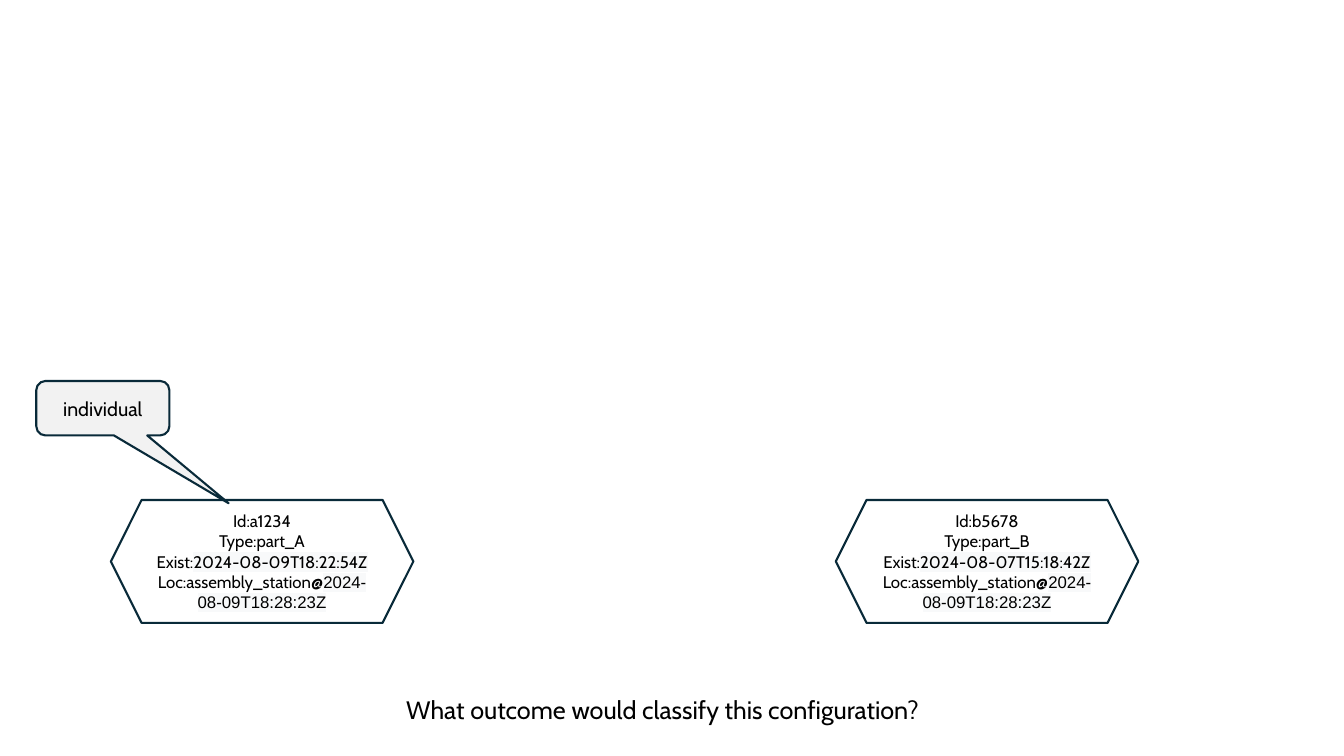
from lxml.etree import Element, SubElement
from pptx import Presentation
from pptx.dml.color import RGBColor
from pptx.enum.shapes import MSO_SHAPE as Shape
from pptx.enum.text import MSO_ANCHOR as Anchor, MSO_AUTO_SIZE as AutoSize, PP_ALIGN as Align
from pptx.oxml.ns import qn
from pptx.util import Inches, Pt

# Content: each paragraph is a list of (text, format) runs
STAMP = {"highlight": "stamp"}
LOCATION = [("Loc:assembly_station@", {}),
            ("2024-08-09T18:28:23Z", {"font": "stamp_font", **STAMP})]
INDIVIDUALS = [
    ("a1234", "part_A", "2024-08-09T18:22:54Z"),
    ("b5678", "part_B", "2024-08-07T15:18:42Z"),
]
CALLOUT = "individual"
QUESTION = "What outcome would classify this configuration?"

THEME = {
    "font": "Cabin", "stamp_font": "Arial",
    "text": "000000", "line": "092A39", "node": "FFFFFF",
    "callout": "F2F2F2", "stamp": "F8F9FA",
    "node_size": 12, "callout_size": 14, "question_size": 18, "line_width": 1.5,
}

# Layout in inches
NODE_LEFT, NODE_TOP, NODE_W, NODE_H = 1.1, 4.96, 3, 1.22
NODE_PITCH = 7.19
CALLOUT_BOX = (0.36, 3.78, 1.32, 0.54)
CALLOUT_TIP = (0.945, 1.746, 0.167)
QUESTION_BOX = (3.93, 6.84, 5.47, 0.4)


def write(frame, paragraphs, size, align=Align.CENTER, anchor=Anchor.MIDDLE, wrap=True):
    frame.word_wrap = wrap
    frame.vertical_anchor = anchor
    for number, runs in enumerate(paragraphs):
        paragraph = frame.paragraphs[0] if number == 0 else frame.add_paragraph()
        paragraph.alignment = align
        for words, style in runs:
            run = paragraph.add_run()
            run.text = words
            run.font.size = Pt(THEME[size])
            run.font.name = THEME[style.get("font", "font")]
            run.font.color.rgb = RGBColor.from_string(THEME["text"])
            if "highlight" in style:
                marker = Element(qn("a:highlight"))
                SubElement(marker, qn("a:srgbClr"), val=THEME[style["highlight"]])
                run.font._element.find(qn("a:solidFill")).addnext(marker)


def add_outlined(slide, kind, box, fill):
    outlined = slide.shapes.add_shape(kind, *map(Inches, box))
    outlined.shadow.inherit = False
    outlined.fill.solid()
    outlined.fill.fore_color.rgb = RGBColor.from_string(THEME[fill])
    outlined.line.color.rgb = RGBColor.from_string(THEME["line"])
    outlined.line.width = Pt(THEME["line_width"])
    return outlined


def main():
    deck = Presentation()
    deck.slide_width, deck.slide_height = Inches(13.33), Inches(7.5)
    slide = deck.slides.add_slide(deck.slide_layouts[6])

    # Individuals
    for column, (identity, part, exist) in enumerate(INDIVIDUALS):
        box = (NODE_LEFT + column * NODE_PITCH, NODE_TOP, NODE_W, NODE_H)
        node = add_outlined(slide, Shape.HEXAGON, box, "node")
        write(node.text_frame, [
            [(f"Id:{identity}", {})],
            [(f"Type:{part}", {})],
            [("Exist:", {}), (exist, STAMP)],
            LOCATION,
        ], "node_size")

    # Question
    question = slide.shapes.add_textbox(*map(Inches, QUESTION_BOX)).text_frame
    write(question, [[(QUESTION, {})]], "question_size",
          align=Align.LEFT, anchor=Anchor.TOP, wrap=False)
    question.auto_size = AutoSize.SHAPE_TO_FIT_TEXT

    # Callout
    callout = add_outlined(slide, Shape.ROUNDED_RECTANGULAR_CALLOUT, CALLOUT_BOX, "callout")
    for index, value in enumerate(CALLOUT_TIP):
        callout.adjustments[index] = value
    write(callout.text_frame, [[(CALLOUT, {})]], "callout_size")

    deck.save("out.pptx")


if __name__ == "__main__":
    main()
